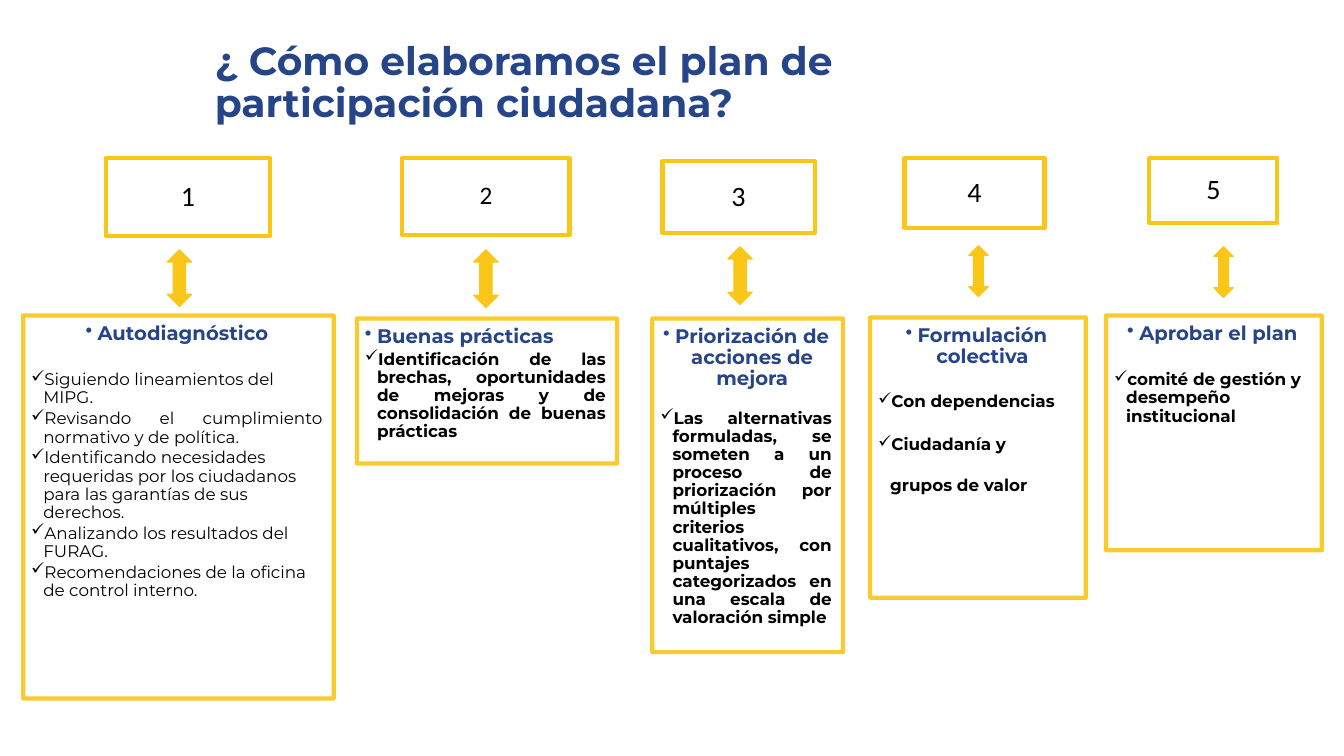
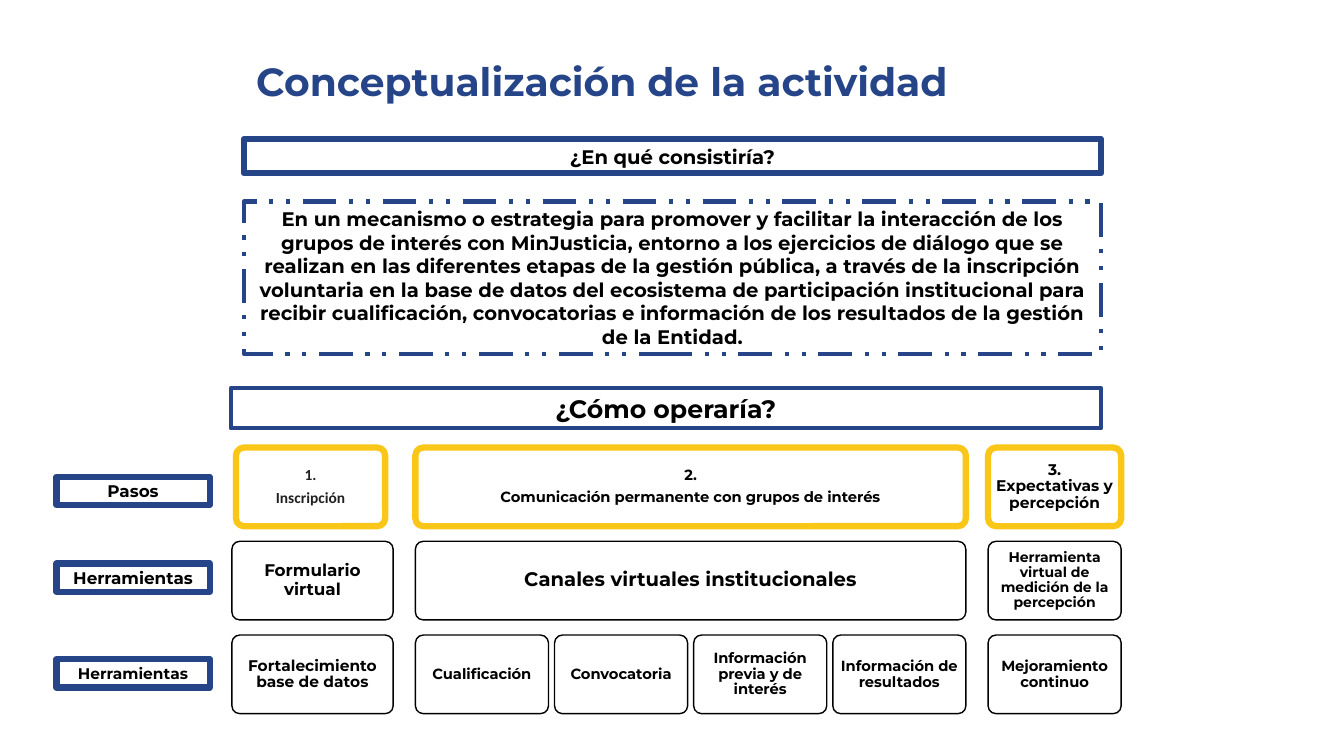
"""Build two slides on the citizen participation plan and its activity."""
import dataclasses

import lxml.etree
import pptx
import pptx.dml.color
import pptx.enum.dml
import pptx.enum.shapes
import pptx.enum.text
import pptx.oxml.ns
import pptx.util

EMU_PER_PX = 9144
ALIGN = pptx.enum.text.PP_ALIGN
ANCHOR = pptx.enum.text.MSO_ANCHOR
SHAPE = pptx.enum.shapes.MSO_SHAPE
DASH = pptx.enum.dml.MSO_LINE


@dataclasses.dataclass(frozen=True)
class Theme:
    """Colours, fonts, type sizes and line widths."""
    blue: str = "264488"
    yellow: str = "FAC618"
    white: str = "FFFFFF"
    black: str = "000000"
    gray: str = "212121"
    font: str = "Montserrat"
    plain_font: str = "Calibri"
    title: float = 28
    number: float = 20
    number_small: float = 18
    banner: float = 18
    heading: float = 14
    body: float = 12
    label: float = 11
    small: float = 10.5
    tiny: float = 10
    thick: float = 4.5
    medium: float = 3
    thin: float = 1


THEME = Theme()


@dataclasses.dataclass(frozen=True)
class Step:
    """One numbered step with its arrow and its card."""
    number_box: tuple
    arrow_box: tuple
    card_box: tuple
    heading: str
    items: tuple
    number_size: float = THEME.number
    heading_align: ALIGN = ALIGN.CENTER
    heading_gap: float = 2
    bold: bool = True
    spacing: float = 0.9


STEPS = (
    Step((105, 157, 163, 77), (166, 248, 24, 56), (23, 313, 308, 380), "Autodiagnóstico",
         (("Siguiendo lineamientos del MIPG.", ALIGN.LEFT),
          ("Revisando el cumplimiento normativo y de política.", ALIGN.JUSTIFY),
          ("Identificando necesidades requeridas por los ciudadanos para las "
           "garantías de sus derechos.", ALIGN.LEFT),
          ("Analizando los resultados del FURAG.", ALIGN.LEFT),
          ("Recomendaciones de la oficina de control interno.", ALIGN.LEFT)),
         heading_gap=19, bold=False),
    Step((399, 157, 166, 76), (470, 248, 24, 57), (354, 316, 258, 144), "Buenas prácticas",
         (("Identificación de las brechas, oportunidades de mejoras y de "
           "consolidación de buenas prácticas", ALIGN.JUSTIFY),),
         number_size=THEME.number_small, heading_align=ALIGN.LEFT),
    Step((657, 160, 151, 71), (722, 245, 24, 57), (647, 316, 189, 331),
         "Priorización de acciones de mejora",
         (("Las alternativas formuladas, se someten a un proceso de priorización por "
           "múltiples criterios cualitativos, con puntajes categorizados en una "
           "escala de valoración simple", ALIGN.JUSTIFY),),
         heading_gap=14),
    Step((897, 157, 139, 69), (961, 244, 19, 50), (863, 315, 214, 278),
         "Formulación colectiva",
         (("Con dependencias", ALIGN.LEFT),
          ("Ciudadanía y\ngrupos de valor", ALIGN.LEFT)),
         spacing=2),
    Step((1140, 157, 127, 64), (1204, 245, 19, 50), (1097, 313, 214, 233), "Aprobar el plan",
         (("comité de gestión y desempeño institucional", ALIGN.LEFT),),
         heading_gap=19),
)


def px(length):
    """Turn px into EMU."""
    return pptx.util.Emu(length * EMU_PER_PX)


def color(value):
    """Return the colour for a hex value."""
    return pptx.dml.color.RGBColor.from_string(value)


def place(shape, box):
    """Move and size a shape."""
    shape.left, shape.top, shape.width, shape.height = map(px, box)


def add_box(slide, box, line, width, fill=THEME.white, kind=SHAPE.RECTANGLE):
    """Add a filled and outlined shape."""
    shape = slide.shapes.add_shape(kind, *map(px, box))
    shape.shadow.inherit = False
    shape.fill.solid()
    shape.fill.fore_color.rgb = color(fill)
    shape.line.color.rgb = color(line)
    shape.line.width = pptx.util.Pt(width)
    return shape


def make_translucent(shape, percent):
    """Set the opacity of a shape's fill and line."""
    for element in list(shape.element.spPr.iter(pptx.oxml.ns.qn("a:srgbClr"))):
        alpha = lxml.etree.SubElement(element, pptx.oxml.ns.qn("a:alpha"))
        alpha.set("val", str(percent * 1000))


def set_frame(shape, anchor=ANCHOR.MIDDLE, insets=(10, 5, 10, 5)):
    """Set wrapping, anchor and insets, and return the text frame."""
    frame = shape.text_frame
    frame.word_wrap = True
    frame.auto_size = pptx.enum.text.MSO_AUTO_SIZE.NONE
    frame.vertical_anchor = anchor
    (frame.margin_left, frame.margin_top,
     frame.margin_right, frame.margin_bottom) = map(px, insets)
    return frame


def write(paragraph, text, size, ink=THEME.black, font=THEME.font, bold=True,
          align=ALIGN.CENTER, spacing=0.9, after=0, bullet=None):
    """Fill and format one paragraph."""
    paragraph.text = text
    paragraph.alignment = align
    paragraph.line_spacing = spacing
    paragraph.space_after = pptx.util.Pt(after)
    if bullet:
        properties = paragraph._p.get_or_add_pPr()
        properties.set("marL", str(px(12)))
        properties.set("indent", str(-px(12)))
        mark = lxml.etree.SubElement(properties, pptx.oxml.ns.qn("a:buChar"))
        mark.set("char", bullet)
    paragraph.font.size = pptx.util.Pt(size)
    paragraph.font.name = font
    paragraph.font.bold = bold
    paragraph.font.color.rgb = color(ink)


def add_titled_slide(presentation, title, box, align, spacing):
    """Add a title-only slide with its title."""
    slide = presentation.slides.add_slide(presentation.slide_layouts[5])
    place(slide.shapes.title, box)
    frame = set_frame(slide.shapes.title)
    write(frame.paragraphs[0], title, THEME.title, THEME.blue, align=align, spacing=spacing)
    return slide


def add_card(slide, step):
    """Add the bulleted card of a step."""
    card = add_box(slide, step.card_box, THEME.yellow, THEME.medium)
    make_translucent(card, 90)
    frame = set_frame(card, ANCHOR.TOP, (8, 8, 11, 12))
    write(frame.paragraphs[0], step.heading, THEME.heading, THEME.blue,
          align=step.heading_align, after=step.heading_gap, bullet="•")
    for text, align in step.items:
        write(frame.add_paragraph(), text, THEME.body, bold=step.bold, align=align,
              spacing=step.spacing, after=2, bullet="✓")


def add_step(slide, number, step):
    """Add a number box, its arrow and its card."""
    number_box = add_box(slide, step.number_box, THEME.yellow, THEME.medium)
    write(set_frame(number_box).paragraphs[0], str(number), step.number_size,
          font=THEME.plain_font, bold=False)
    add_card(slide, step)
    add_box(slide, step.arrow_box, THEME.yellow, THEME.thin, THEME.yellow, SHAPE.UP_DOWN_ARROW)


def add_banner(slide, box, text, size, width=THEME.thick, dash=None):
    """Add a blue-outlined rectangle with one paragraph."""
    banner = add_box(slide, box, THEME.blue, width)
    if dash:
        banner.line.dash_style = dash
    write(set_frame(banner).paragraphs[0], text, size, spacing=1)


def add_node(slide, box, lines, size, line=THEME.black, width=THEME.thin, **style):
    """Add a rounded box with centred paragraphs."""
    node = add_box(slide, box, line, width, kind=SHAPE.ROUNDED_RECTANGLE)
    node.adjustments[0] = 0.1
    frame = set_frame(node, insets=(5, 5, 5, 5))
    for index, text in enumerate(lines):
        paragraph = frame.add_paragraph() if index else frame.paragraphs[0]
        write(paragraph, text, size, after=4 if index < len(lines) - 1 else 0, **style)


def build_plan(presentation):
    """Build the slide of the five steps."""
    slide = add_titled_slide(
        presentation, "¿ Cómo elaboramos el plan de participación ciudadana?",
        (203, 31, 776, 104), ALIGN.LEFT, 0.9)
    for number, step in enumerate(STEPS, 1):
        add_step(slide, number, step)


def build_activity(presentation):
    """Build the slide of the activity's concept and operation."""
    slide = add_titled_slide(presentation, "Conceptualización de la actividad",
                             (229, 52, 736, 57), ALIGN.CENTER, 1)
    add_banner(slide, (242, 138, 850, 34), "¿En qué consistiría?", THEME.heading)
    add_banner(
        slide, (242, 200, 850, 151),
        "En un mecanismo o estrategia para promover y facilitar la interacción de los "
        "grupos de interés con MinJusticia, entorno a los ejercicios de diálogo que se "
        "realizan en las diferentes etapas de la gestión pública, a través de la "
        "inscripción voluntaria en la base de datos del ecosistema de participación "
        "institucional para recibir cualificación, convocatorias e información de los "
        "resultados de la gestión de la Entidad.",
        THEME.heading, THEME.medium, DASH.DASH_DOT_DOT)
    add_banner(slide, (229, 385, 863, 40), "¿Cómo operaría?", THEME.banner, THEME.medium)

    for top, text, size in ((473, "Pasos", THEME.body), (559, "Herramientas", THEME.body),
                            (654, "Herramientas", THEME.label)):
        add_banner(slide, (56, top, 152, 28), text, size)

    height = 78
    steps_top, tools_top, results_top = (444 + 93 * row for row in range(3))
    first, middle, last = (230, 160), (412, 546), (980, 132)
    highlight = {"line": THEME.yellow, "width": THEME.thick}

    add_node(slide, (234, steps_top, 148, height), ("1.", "Inscripción"), THEME.label,
             ink=THEME.gray, font=THEME.plain_font, **highlight)
    for (left, width), lines, size in (
            (middle, ("2.", "Comunicación permanente con grupos de interés"), THEME.small),
            (last, ("3. Expectativas y percepción",), THEME.label)):
        add_node(slide, (left, steps_top, width, height), lines, size, **highlight)

    results = ("Cualificación", "Convocatoria", "Información previa y de interés",
               "Información de resultados")
    nodes = [
        (first, tools_top, "Formulario virtual", THEME.body),
        (middle, tools_top, "Canales virtuales institucionales", THEME.heading),
        (last, tools_top, "Herramienta virtual de medición de la percepción", THEME.tiny),
        (first, results_top, "Fortalecimiento base de datos", THEME.label),
        (last, results_top, "Mejoramiento continuo", THEME.small),
    ]
    nodes += [((middle[0] + 138 * index, 132), results_top, text, THEME.small)
              for index, text in enumerate(results)]
    for (left, width), top, text, size in nodes:
        add_node(slide, (left, top, width, height), (text,), size)


def main():
    """Build and save the presentation."""
    presentation = pptx.Presentation()
    presentation.slide_width = px(1333)
    presentation.slide_height = px(750)
    build_plan(presentation)
    build_activity(presentation)
    presentation.save("out.pptx")


if __name__ == "__main__":
    main()
